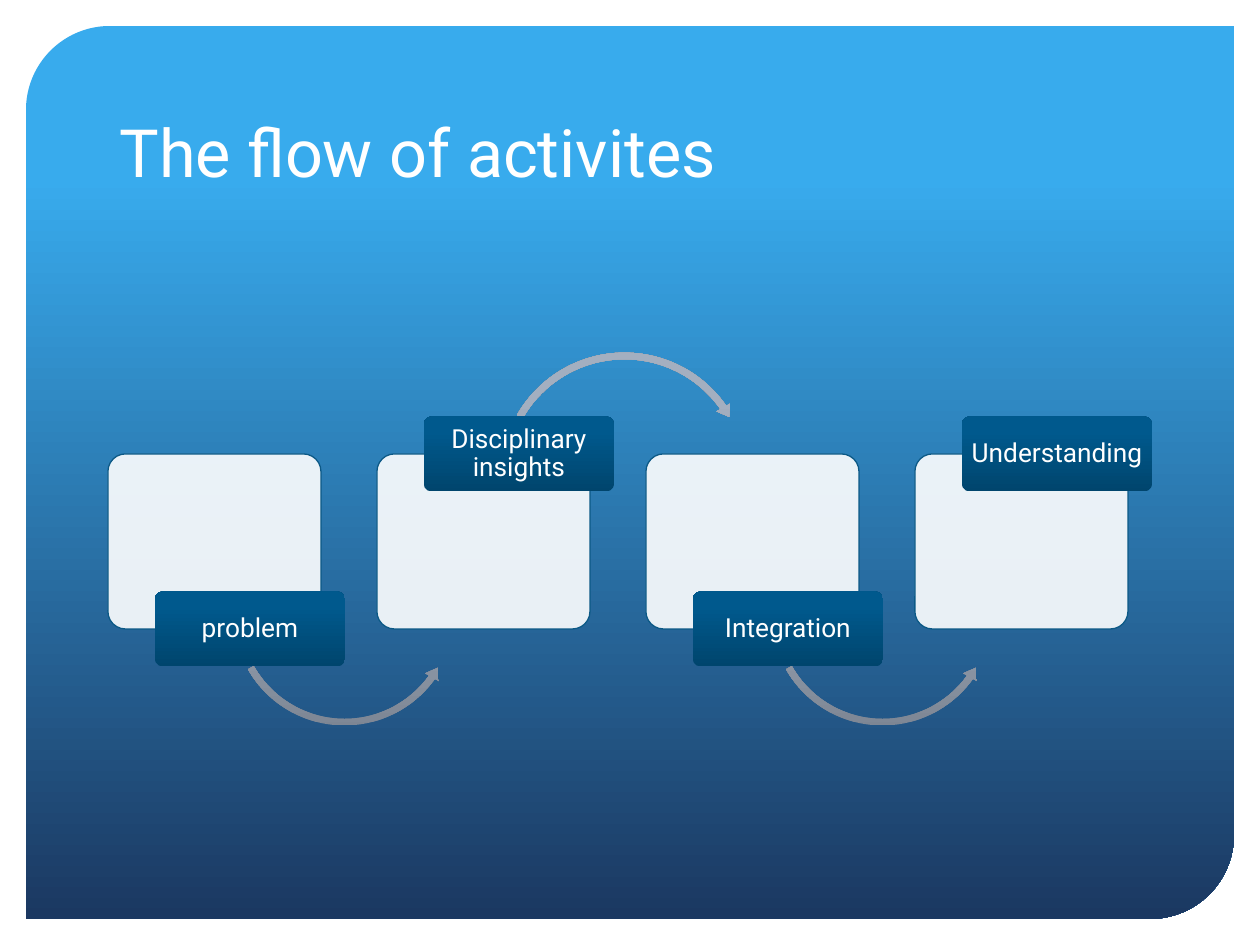
from copy import deepcopy
from dataclasses import dataclass

from lxml import etree
from pptx import Presentation
from pptx import util as u
from pptx.dml.color import RGBColor
from pptx.enum import shapes, text
from pptx.oxml.ns import qn

SCALE = 914400 / 126  # EMU in one px
KIND = shapes.MSO_SHAPE


@dataclass(frozen=True)
class Theme:
    font: str = "Roboto"
    ink: str = "FFFFFF"
    card: str = "FFFFFF"
    edge: str = "0C5986"
    back: tuple = ((0.17, "38ABED"), (1, "1B3861"))
    label: tuple = ((0, "00456D"), (0.8, "00598D"), (1, "005A8E"))
    arrow: tuple = ((0, "7D8694"), (0.8, "A3AFC0"), (1, "A3AFC1"))
    head: int = 38
    body: int = 15


THEME = Theme()

# Each step: label text, and whether the label sits low on its card
STEPS = (("problem", True), ("Disciplinary insights", False),
         ("Integration", True), ("Understanding", False))
LEFT, TOP, PITCH = 108, 454, 269
CARD = (213, 175)
LABEL = (190, 75)
LOW_ARC = (0.029, 3.61, 21.365, 90.245, 0.034)
HIGH_ARC = (0.026, 3.205, 195.04, 125.755, 0.031)


def px(n):
    return u.Emu(round(n * SCALE))


def put(obj, vals):
    for key, val in vals.items():
        setattr(obj, key, val)


def shade(shape, stops, angle):
    """Fill with a gradient of any number of stops."""
    fill = shape.fill
    fill.gradient()
    fill.gradient_angle = angle
    first = shape.element.spPr.find(".//" + qn("a:gs"))
    for _ in stops[2:]:
        first.addnext(deepcopy(first))
    for stop, (pos, tint) in zip(fill.gradient_stops, stops):
        stop.position = pos
        stop.color.rgb = RGBColor.from_string(tint)


def draw(slide, kind, box, adj):
    shape = slide.shapes.add_shape(kind, *map(px, box))
    shape.shadow.inherit = False
    shape.line.fill.background()
    for i, val in enumerate(adj):
        shape.adjustments[i] = val
    return shape


def write(shape, words, size, frame, para):
    tf = shape.text_frame
    put(tf, {"word_wrap": True, **frame})
    line = tf.paragraphs[0]
    line.text = words
    put(line, para)
    put(line.font, {"name": THEME.font, "size": u.Pt(size)})
    line.font.color.rgb = RGBColor.from_string(THEME.ink)


def add_back(slide):
    back = draw(slide, KIND.ROUND_2_DIAG_RECTANGLE,
                (26, 26, 1208, 893), (0.094, 0))
    shade(back, THEME.back, 270)


def add_title(slide):
    box = slide.shapes.add_textbox(*map(px, (107, 53, 1045, 144)))
    write(box, "The flow of activites", THEME.head,
          {"vertical_anchor": text.MSO_ANCHOR.BOTTOM}, {})


def add_card(slide, x):
    card = draw(slide, KIND.ROUNDED_RECTANGLE, (x, TOP, *CARD), (0.1,))
    card.fill.solid()
    card.fill.fore_color.rgb = RGBColor.from_string(THEME.card)
    tint = card.element.spPr.find(qn("a:solidFill"))[0]
    etree.SubElement(tint, qn("a:alpha"), val="90000")
    card.line.color.rgb = RGBColor.from_string(THEME.edge)
    card.line.width = u.Pt(0.75)


def add_arrow(slide, x, low):
    if low:
        arrow = draw(slide, KIND.LEFT_CIRCULAR_ARROW,
                     (x + 121, 499, 231, 231), LOW_ARC)
    else:
        arrow = draw(slide, KIND.CIRCULAR_ARROW,
                     (x + 119, 348, 257, 257), HIGH_ARC)
    shade(arrow, THEME.arrow, 90)


def add_label(slide, x, words, low):
    # Labels are centred on the card's lower or upper edge
    wide, tall = LABEL
    mid = TOP + CARD[1] * low
    label = draw(slide, KIND.ROUNDED_RECTANGLE,
                 (x + 47, mid - tall / 2, wide, tall), (0.1,))
    shade(label, THEME.label, 90)
    frame = {"vertical_anchor": text.MSO_ANCHOR.MIDDLE,
             "margin_left": px(6), "margin_right": px(6),
             "margin_top": px(5), "margin_bottom": px(5)}
    write(label, words, THEME.body, frame,
          {"alignment": text.PP_ALIGN.CENTER, "line_spacing": 0.9})


def main():
    deck = Presentation()
    put(deck, {"slide_width": px(1260), "slide_height": px(945)})
    slide = deck.slides.add_slide(deck.slide_layouts[6])

    # Backdrop and heading
    add_back(slide)
    add_title(slide)

    # Flow: a card, the arrow to the next step, then the label
    for i, (words, low) in enumerate(STEPS):
        x = LEFT + i * PITCH
        add_card(slide, x)
        if i < len(STEPS) - 1:
            add_arrow(slide, x, low)
        add_label(slide, x, words, low)

    deck.save("out.pptx")


if __name__ == "__main__":
    main()
